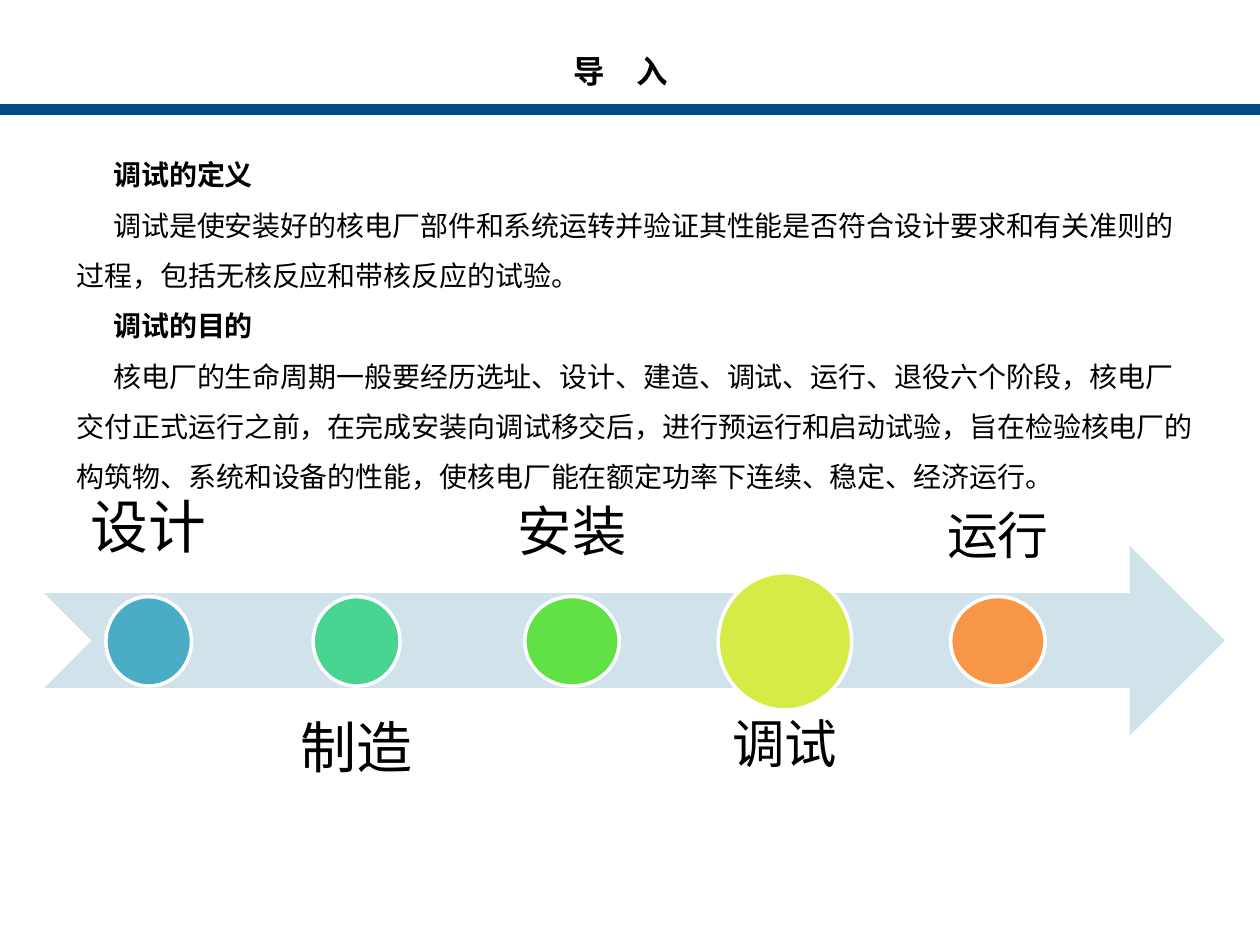
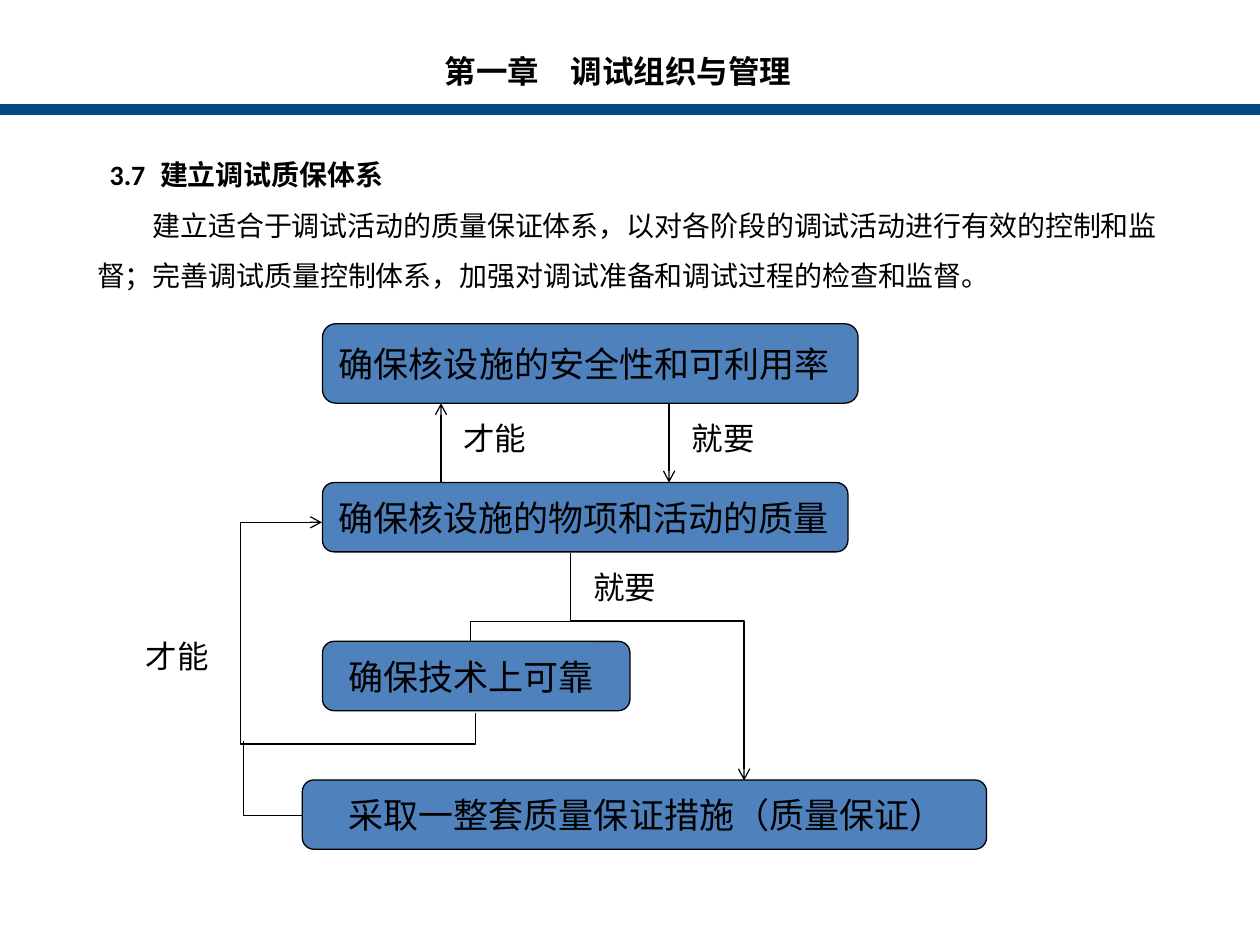
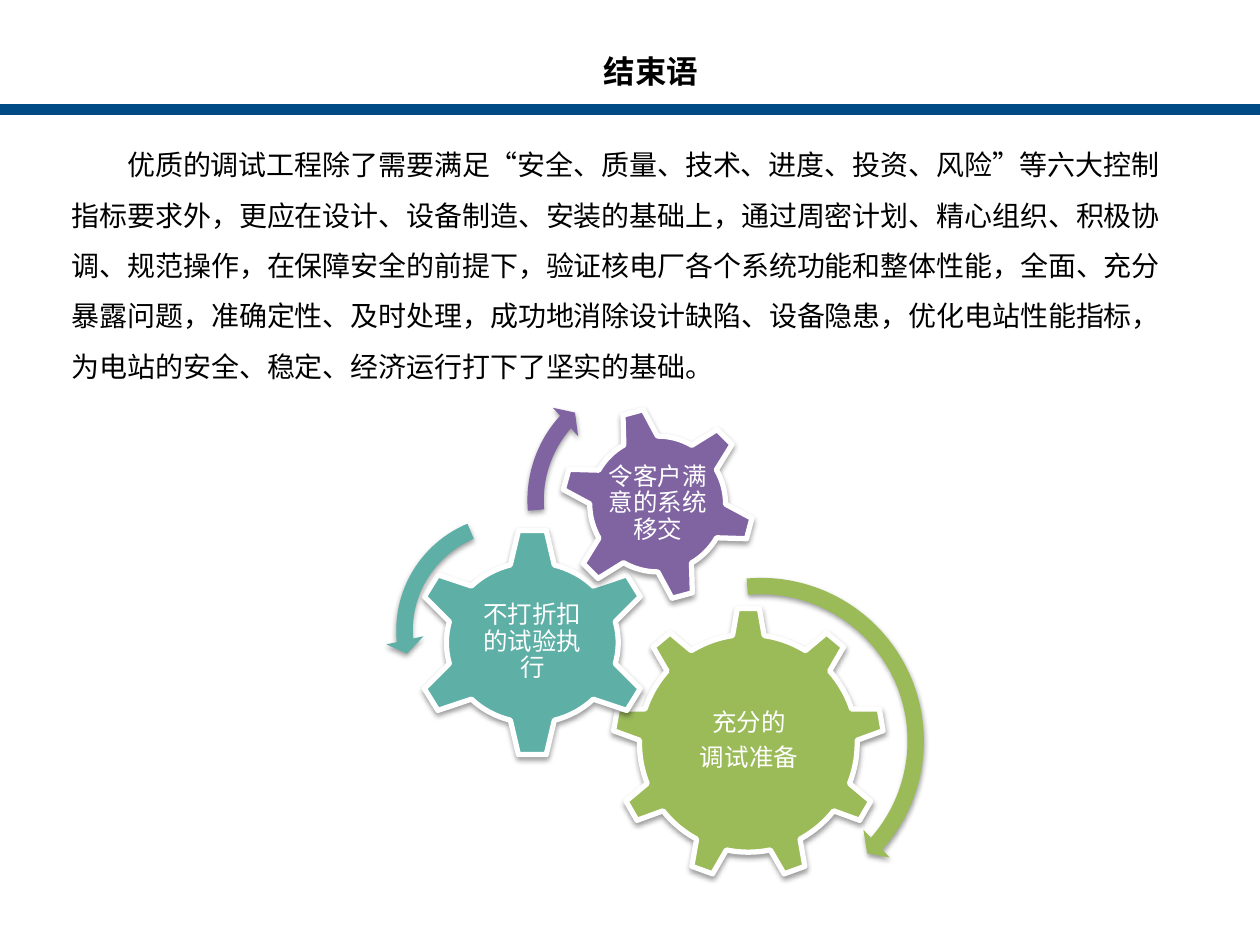
from lxml import etree
from pptx import Presentation
from pptx.dml.color import RGBColor
from pptx.enum import shapes, text
from pptx.oxml import ns
from pptx.util import Inches, Pt

BLACK = RGBColor(0x00, 0x00, 0x00)
WHITE = RGBColor(0xFF, 0xFF, 0xFF)
NAVY = RGBColor(0x00, 0x4A, 0x86)
PALE_BLUE = RGBColor(0xD0, 0xE3, 0xEA)
AQUA = RGBColor(0x4B, 0xAC, 0xC6)
MINT = RGBColor(0x48, 0xD4, 0x91)
GREEN = RGBColor(0x60, 0xE1, 0x46)
LIME = RGBColor(0xD5, 0xEC, 0x46)
ORANGE = RGBColor(0xF7, 0x96, 0x46)
BLUE = RGBColor(0x4F, 0x81, 0xBD)
OLIVE = RGBColor(0x9B, 0xBB, 0x59)
TEAL = RGBColor(0x5E, 0xAF, 0xA6)
PURPLE = RGBColor(0x80, 0x64, 0xA2)

FONT = "Calibri"
SHAPE = shapes.MSO_SHAPE
TOP, MIDDLE, BOTTOM = (text.MSO_ANCHOR.TOP, text.MSO_ANCHOR.MIDDLE,
                       text.MSO_ANCHOR.BOTTOM)
LEFT, CENTER = text.PP_ALIGN.LEFT, text.PP_ALIGN.CENTER


def inches(values):
    return [Inches(value) for value in values]


def add_child(parent, tag, **attributes):
    child = etree.SubElement(parent, ns.qn(tag))
    for name, value in attributes.items():
        child.set(name, str(value))
    return child


def write(frame, words, size=18, color=BLACK, bold=False, align=LEFT,
          anchor=TOP, insets=(0.1, 0.05, 0.1, 0.05), spacing=1.0, after=0,
          indent=0, tab=None):
    """Fill a frame; each paragraph is a string or (string, own format)."""
    frame.word_wrap = True
    frame.auto_size = text.MSO_AUTO_SIZE.NONE
    frame.vertical_anchor = anchor
    (frame.margin_left, frame.margin_top,
     frame.margin_right, frame.margin_bottom) = inches(insets)
    for index, item in enumerate(words):
        line, own = (item, {}) if isinstance(item, str) else item
        para = frame.add_paragraph() if index else frame.paragraphs[0]
        para.alignment = align
        para.line_spacing = spacing
        para.space_before = Pt(0)
        para.space_after = Pt(after)
        properties = para._p.get_or_add_pPr()
        properties.set("marL", "0")
        properties.set("indent", str(Inches(own.get("indent", indent))))
        add_child(properties, "a:buNone")
        stop = own.get("tab", tab)
        if stop:
            stops = add_child(properties, "a:tabLst")
            add_child(stops, "a:tab", pos=Inches(stop), algn="l")
        span = para.add_run()
        span.text = line
        span.font.name = FONT
        span.font.size = Pt(size)
        span.font.bold = own.get("bold", bold)
        span.font.color.rgb = color


class Deck:
    def __init__(self):
        self.file = Presentation()
        self.file.slide_width = Inches(10)
        self.file.slide_height = Inches(7.5)
        self.page = None

    def add_page(self, title, title_left, title_width, body, body_at,
                 tab=None, **body_format):
        layout = self.file.slide_layouts[1]
        self.page = self.file.slides.add_slide(layout)
        self.shape(SHAPE.RECTANGLE, (0, 0.84, 10, 0.06), NAVY, NAVY, 2)
        heading, content = self.page.placeholders
        self.place(heading, (title_left, 0.36, title_width, 0.4))
        write(heading.text_frame, [title], bold=True, tab=tab,
              insets=(0.1, 0.05, 0, 0.05))
        self.place(content, body_at)
        write(content.text_frame, body, size=16, spacing=1.5, **body_format)

    def place(self, box, at):
        box.left, box.top, box.width, box.height = inches(at)

    def shape(self, kind, at, fill, line=None, weight=0.75, rotation=0,
              adjust=(), shadow=False):
        box = self.page.shapes.add_shape(kind, *inches(at))
        box.rotation = rotation
        for index, value in enumerate(adjust):
            box.adjustments[index] = value
        box.fill.solid()
        box.fill.fore_color.rgb = fill
        if line is None:
            box.line.fill.background()
        else:
            box.line.color.rgb = line
            box.line.width = Pt(weight)
        box.shadow.inherit = False
        if shadow:
            effects = box._element.spPr.find(ns.qn("a:effectLst"))
            outer = add_child(effects, "a:outerShdw", blurRad=Pt(3.1),
                              dist=Pt(1.6), dir=5400000, rotWithShape=0)
            tint = add_child(outer, "a:srgbClr", val=str(BLACK))
            add_child(tint, "a:alpha", val=38000)
        return box

    def label(self, words, at, **text_format):
        box = self.page.shapes.add_textbox(*inches(at))
        write(box.text_frame, words, **text_format)

    def line(self, start, end, kind=shapes.MSO_CONNECTOR.STRAIGHT, arrow=True):
        line = self.page.shapes.add_connector(kind, *inches(start + end))
        line.line.color.rgb = BLACK
        line.line.width = Pt(0.75)
        if arrow:
            add_child(line.line._get_or_add_ln(), "a:tailEnd", type="arrow")
        add_child(line._element.spPr, "a:effectLst")
        return line

    def elbow(self, at, preset, rotation, flips="", bends=(), arrow=False):
        """Bent connector in a frame turned by rotation; bends in percent."""
        left, top, width, height = at
        line = self.line((left, top), (left + width, top + height),
                         shapes.MSO_CONNECTOR.ELBOW, arrow)
        frame = line._element.spPr.find(ns.qn("a:xfrm"))
        frame.set("rot", str(rotation * 60000))
        for axis in flips:
            frame.set("flip" + axis, "1")
        geometry = line._element.spPr.find(ns.qn("a:prstGeom"))
        geometry.set("prst", preset)
        guides = geometry.find(ns.qn("a:avLst"))
        for number, bend in enumerate(bends, 1):
            add_child(guides, "a:gd", name=f"adj{number}",
                      fmla=f"val {round(bend * 1000)}")


def introduction(deck):
    deck.add_page("导\t入", 4.45, 1.06, [
        ("调试的定义", {"bold": True}),
        "调试是使安装好的核电厂部件和系统运转并验证其性能是否符合设计要求和有关准则的过程，"
        "包括无核反应和带核反应的试验。",
        ("调试的目的", {"bold": True}),
        "核电厂的生命周期一般要经历选址、设计、建造、调试、运行、退役六个阶段，"
        "核电厂交付正式运行之前，在完成安装向调试移交后，进行预运行和启动试验，"
        "旨在检验核电厂的构筑物、系统和设备的性能，使核电厂能在额定功率下连续、稳定、经济运行。",
    ], (0.51, 1.07, 9.13, 2.93), tab=0.59, indent=0.29)
    deck.shape(SHAPE.NOTCHED_RIGHT_ARROW, (0.35, 4.33, 9.37, 1.51), PALE_BLUE)
    stages = [
        ("设计", 33, 1.18, 1.65, 0.68, 0.71, AQUA),
        ("制造", 32, 2.83, 1.6, 0.69, 0.71, MINT),
        ("安装", 31, 4.54, 1.75, 0.75, 0.71, GREEN),
        ("调试", 30, 6.23, 1.6, 1.06, 1.09, LIME),
        ("运行", 29, 7.92, 1.74, 0.75, 0.71, ORANGE),
    ]
    for index, stage in enumerate(stages):
        name, size, center, label_width, width, height, color = stage
        above = index % 2 == 0
        deck.label([name], (center - label_width / 2, 3.2 if above else 5.47,
                            label_width, 1.51),
                   size=size, align=CENTER, spacing=0.9,
                   anchor=BOTTOM if above else TOP,
                   insets=[size * 0.56 / 72] * 4)
        deck.shape(SHAPE.OVAL, (center - width / 2, 5.09 - height / 2,
                                width, height), color, WHITE, 2)


def quality_system(deck):
    deck.add_page("第一章\t调试组织与管理", 3.43, 2.92, [
        ("3.7\t建立调试质保体系", {"bold": True, "indent": 0.1, "tab": 0.53}),
        "建立适合于调试活动的质量保证体系，以对各阶段的调试活动进行有效的控制和监督；"
        "完善调试质量控制体系，加强对调试准备和调试过程的检查和监督。",
    ], (0.67, 1.07, 8.66, 1.31), tab=0.92, indent=0.44)
    goals = [
        ("确保核设施的安全性和可利用率", (2.56, 2.57, 4.25, 0.63), 0.1),
        ("确保核设施的物项和活动的质量", (2.56, 3.83, 4.17, 0.55), 0.1),
        ("确保技术上可靠", (2.56, 5.09, 2.44, 0.55), 0.18),
        ("采取一整套质量保证措施（质量保证）", (2.4, 6.19, 5.43, 0.55), 0.34),
    ]
    for goal, at, inset in goals:
        box = deck.shape(SHAPE.ROUNDED_RECTANGLE, at, BLUE, BLACK)
        write(box.text_frame, [goal], size=20, anchor=MIDDLE,
              insets=(inset, 0.05, 0, 0.05))
    deck.line((5.31, 3.2), (5.31, 3.83))
    deck.line((3.5, 3.83), (3.5, 3.2))
    deck.elbow((4.31, 4.6, 1.81, 1.38), "bentConnector3", 270, "H",
               [30.1], arrow=True)
    deck.elbow((4.05, 4.62, 0.16, 0.79), "bentConnector2", 90, "HV")
    deck.elbow((2.41, 4.29, 1.51, 1.22), "bentConnector4", 90, "H",
               [-16.5, 152.9], arrow=True)
    deck.elbow((1.93, 5.88, 0.47, 0.59), "bentConnector2", 180)
    for word, left, top in [("就要", 5.39, 3.28), ("才能", 3.58, 3.28),
                            ("就要", 4.61, 4.46), ("才能", 1.06, 5.01)]:
        deck.label([word], (left, top, 0.79, 0.4))


def closing(deck):
    deck.add_page("结束语", 4.69, 0.96, [
        "优质的调试工程除了需要满足“安全、质量、技术、进度、投资、风险”等六大控制指标要求外，"
        "更应在设计、设备制造、安装的基础上，通过周密计划、精心组织、积极协调、规范操作，"
        "在保障安全的前提下，验证核电厂各个系统功能和整体性能，全面、充分暴露问题，"
        "准确定性、及时处理，成功地消除设计缺陷、设备隐患，优化电站性能指标，"
        "为电站的安全、稳定、经济运行打下了坚实的基础。",
    ], (0.47, 0.99, 9.02, 2.12), indent=0.44, after=6)
    gears = [
        (SHAPE.GEAR_9, (4.86, 4.82, 2.16, 2.16), 0, OLIVE,
         ["充分的", "调试准备"], (5.3, 5.33, 1.29, 1.11)),
        (SHAPE.GEAR_6, (3.27, 4.19, 1.91, 1.82), 0, TEAL,
         ["不打折扣的试验执行"], (3.74, 4.65, 0.97, 0.9)),
        (SHAPE.GEAR_6, (4.45, 3.23, 1.54, 1.54), 345, PURPLE,
         ["令客户满意的系统移交"], (4.79, 3.57, 0.86, 0.86)),
    ]
    for kind, at, rotation, color, words, label_at in gears:
        deck.shape(kind, at, color, WHITE, 3, rotation, shadow=True)
        deck.label(words, label_at, size=14, color=WHITE, align=CENTER,
                   anchor=MIDDLE, spacing=0.9, after=4.9, insets=[0.02] * 4)
    # Thickness and head width in percent, the three angles in degrees
    turns = [
        (SHAPE.CIRCULAR_ARROW, (4.66, 4.5, 2.76), OLIVE,
         4.7, (4.98, 41.66, 264.95), 5.5),
        (SHAPE.LEFT_CIRCULAR_ARROW, (3.06, 4, 2.01), TEAL,
         6.5, (7.17, 174.82, 247.3), 7.5),
        (SHAPE.CIRCULAR_ARROW, (4.1, 2.89, 2.16), PURPLE,
         6, (6.57, 221.9, 175.14), 7),
    ]
    for kind, (left, top, side), color, thickness, angles, head in turns:
        adjust = [thickness / 100, *(angle * 0.6 for angle in angles),
                  head / 100]
        deck.shape(kind, (left, top, side, side), color, adjust=adjust,
                   shadow=True)


def main():
    deck = Deck()
    introduction(deck)
    quality_system(deck)
    closing(deck)
    deck.file.save("out.pptx")


if __name__ == "__main__":
    main()
